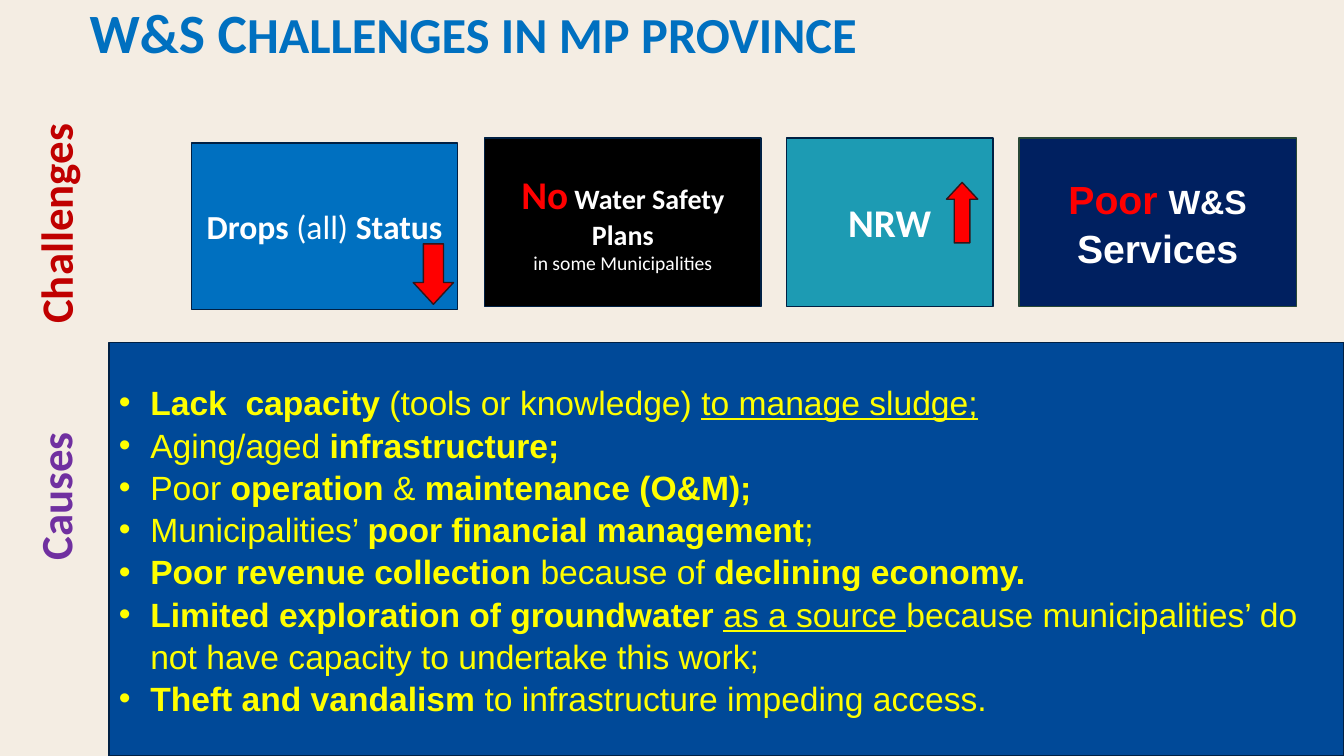
from lxml import etree
from pptx import Presentation
from pptx.dml.color import RGBColor
from pptx.enum.shapes import MSO_SHAPE
from pptx.enum.text import MSO_ANCHOR, MSO_AUTO_SIZE, PP_ALIGN
from pptx.oxml.ns import qn
from pptx.util import Pt

RECTANGLE, DOWN_ARROW, UP_ARROW = MSO_SHAPE.RECTANGLE, MSO_SHAPE.DOWN_ARROW, MSO_SHAPE.UP_ARROW
MIDDLE, TOP = MSO_ANCHOR.MIDDLE, MSO_ANCHOR.TOP
LEFT, CENTER = PP_ALIGN.LEFT, PP_ALIGN.CENTER
NO_AUTOFIT = MSO_AUTO_SIZE.NONE

COLORS = {
    "background": "F4EDE3", "blue": "0070C0", "black": "000000", "teal": "1D9BB3",
    "navy": "002060", "panel": "004998", "outline": "002043", "green outline": "284836",
    "arrow outline": "321519", "red": "FF0000", "white": "FFFFFF", "yellow": "FFFF00",
    "dark red": "C00000", "purple": "7030A0",
}

# A run is (text, size, color, style); style letters: b bold, u underline.
TITLE = [[("W&S C", 39.6, "blue", "b"), ("HALLENGES IN MP PROVINCE", 36, "blue", "b")]]

# Box: left, top, width, height, fill, outline, font, line spacing, paragraphs
CHALLENGES = [
    (136.8, 102.2, 190, 118.8, "blue", "outline", "Calibri", 1,
     [[("Drops ", 24, "white", "b"), ("(all) ", 24, "white", ""), ("Status", 24, "white", "b")]]),
    (346.3, 98.6, 197.3, 120.2, "black", "outline", "Calibri", 1,
     [[("No", 28, "red", "b"), (" Water Safety Plans", 20, "white", "b")],
      [("in some Municipalities", 14, "white", "")]]),
    (561.6, 98.6, 147.6, 120.2, "teal", "outline", "Calibri", 1,
     [[("NRW", 28, "white", "b")]]),
    (727.9, 98.6, 198, 120.2, "navy", "green outline", "Arial", 1.05,
     [[("Poor ", 28, "red", "b"), ("W&S", 24, "white", "b")],
      [("Services", 28, "white", "b")]]),
]

# Arrow: preset, left, top, width, height
ARROWS = [(DOWN_ARROW, 295.2, 174.2, 28.8, 43.2), (UP_ARROW, 676.1, 130.3, 22.3, 43.2)]

CAUSES = [
    [("Lack  capacity ", "b"), ("(tools or knowledge) ", ""), ("to manage sludge;", "u")],
    [("Aging/aged ", ""), ("infrastructure;", "b")],
    [("Poor ", ""), ("operation ", "b"), ("& ", ""), ("maintenance (O&M);", "b")],
    [("Municipalities’ ", ""), ("poor financial management", "b"), (";", "")],
    [("Poor revenue collection ", "b"), ("because of ", ""), ("declining economy.", "b")],
    [("Limited exploration of groundwater ", "b"), ("as a source ", "u"),
     ("because municipalities’ do not have capacity to undertake this work;", "")],
    [("Theft and vandalism ", "b"), ("to infrastructure impeding access.", "")],
]
CAUSES_SIZE = 24
BULLET_INDENT = 22.5

# Side label: text, color, center x, center y, length along the slide edge
SIDE_LABELS = [("Challenges", "dark red", 39.6, 144.7, 187.2),
               ("Causes", "purple", 39.2, 342.7, 129.6)]
LABEL_SIZE, LABEL_HEIGHT = 32, 46.1

SLIDE_WIDTH, SLIDE_HEIGHT = 960, 540
PANEL_LEFT, PANEL_TOP = 77.8, 244.8


def rgb(name):
    return RGBColor.from_string(COLORS[name])


def write(shape, paragraphs, font_name, align, anchor=MIDDLE, spacing=1, bullets=False):
    frame = shape.text_frame
    frame.word_wrap = True
    frame.auto_size = NO_AUTOFIT
    frame.vertical_anchor = anchor
    for index, runs in enumerate(paragraphs):
        paragraph = frame.add_paragraph() if index else frame.paragraphs[0]
        paragraph.alignment = align
        paragraph.line_spacing = spacing
        if bullets:
            add_bullet(paragraph)
        for text, size, color, style in runs:
            run = paragraph.add_run()
            run.text = text
            run.font.name = font_name
            run.font.size = Pt(size)
            run.font.color.rgb = rgb(color)
            run.font.bold = "b" in style
            run.font.underline = "u" in style


def add_bullet(paragraph):
    properties = paragraph._p.get_or_add_pPr()
    properties.set("marL", str(Pt(BULLET_INDENT)))
    properties.set("indent", str(-Pt(BULLET_INDENT)))
    etree.SubElement(properties, qn("a:buFont")).set("typeface", "Arial")
    etree.SubElement(properties, qn("a:buChar")).set("char", "•")


def add_filled_shape(slide, preset, bounds, fill, outline):
    shape = slide.shapes.add_shape(preset, *map(Pt, bounds))
    shape.shadow.inherit = False
    shape.fill.solid()
    shape.fill.fore_color.rgb = rgb(fill)
    shape.line.color.rgb = rgb(outline)
    shape.line.width = Pt(1)
    return shape


def main():
    presentation = Presentation()
    presentation.slide_width = Pt(SLIDE_WIDTH)
    presentation.slide_height = Pt(SLIDE_HEIGHT)
    slide = presentation.slides.add_slide(presentation.slide_layouts[5])
    slide.background.fill.solid()
    slide.background.fill.fore_color.rgb = rgb("background")

    title = slide.shapes.title
    title.left, title.top, title.width, title.height = map(Pt, (38.9, -10, 720.7, 70.6))
    write(title, TITLE, "Calibri", LEFT, spacing=0.9)
    title.text_frame.margin_left = Pt(25.2)

    for *bounds, fill, outline, font_name, spacing, paragraphs in CHALLENGES:
        box = add_filled_shape(slide, RECTANGLE, bounds, fill, outline)
        write(box, paragraphs, font_name, CENTER, spacing=spacing)

    for preset, *bounds in ARROWS:
        arrow = add_filled_shape(slide, preset, bounds, "red", "arrow outline")
        arrow.adjustments[0] = 0.5
        arrow.adjustments[1] = 0.54

    panel_bounds = (PANEL_LEFT, PANEL_TOP, SLIDE_WIDTH - PANEL_LEFT, SLIDE_HEIGHT - PANEL_TOP)
    panel = add_filled_shape(slide, RECTANGLE, panel_bounds, "panel", "outline")
    causes = [[(text, CAUSES_SIZE, "yellow", style) for text, style in runs] for runs in CAUSES]
    write(panel, causes, "Arial", LEFT, spacing=1.05, bullets=True)

    for text, color, center_x, center_y, length in SIDE_LABELS:
        label = slide.shapes.add_textbox(Pt(center_x - length / 2), Pt(center_y - LABEL_HEIGHT / 2),
                                         Pt(length), Pt(LABEL_HEIGHT))
        label.rotation = 270
        write(label, [[(text, LABEL_SIZE, color, "b")]], "Calibri", LEFT, TOP)

    presentation.save("out.pptx")


if __name__ == "__main__":
    main()
